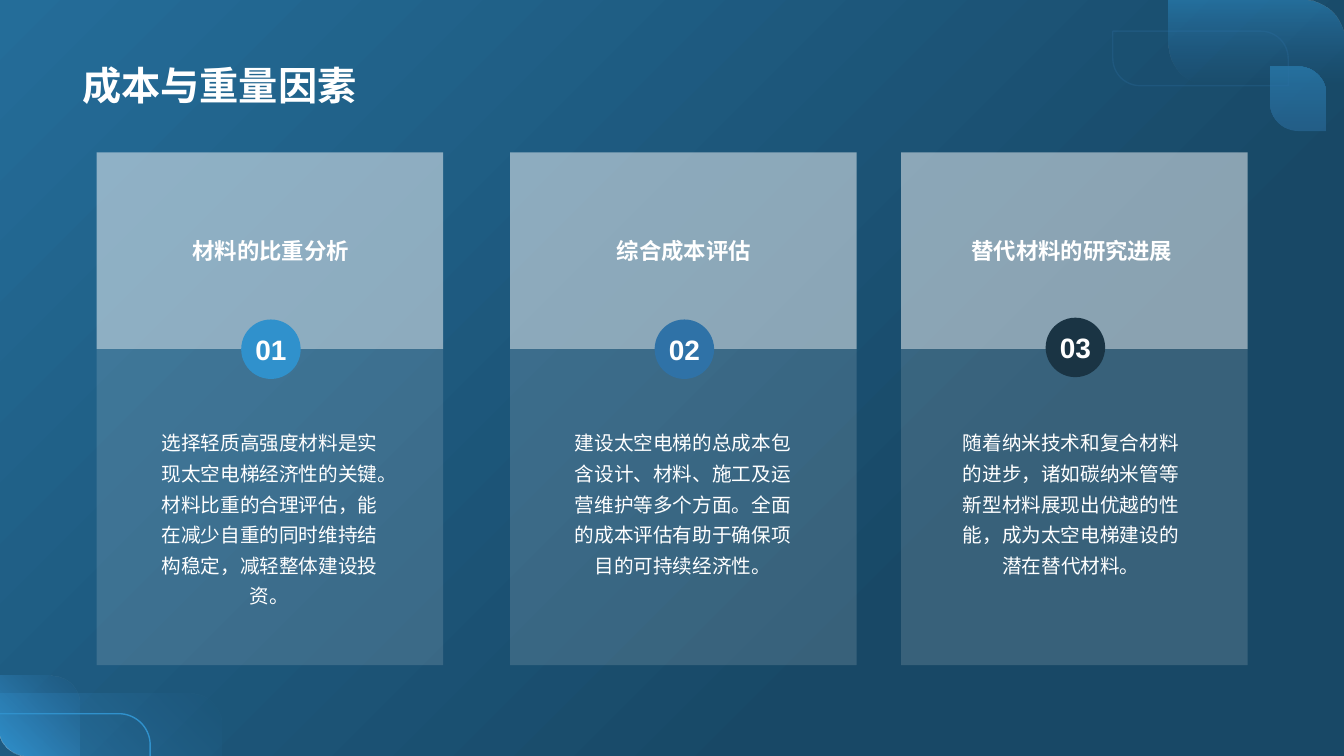
"""Build a slide with three cards on cost and weight factors."""
from math import cos, radians, sin

from lxml import etree
from pptx import Presentation
from pptx.dml.color import RGBColor
from pptx.enum.shapes import MSO_SHAPE
from pptx.enum.text import MSO_ANCHOR, PP_ALIGN
from pptx.oxml.ns import qn
from pptx.util import Pt

RECT = MSO_SHAPE.RECTANGLE
PILL = MSO_SHAPE.ROUNDED_RECTANGLE
LEAF = MSO_SHAPE.ROUND_2_DIAG_RECTANGLE
TOP, MIDDLE, BOTTOM = MSO_ANCHOR.TOP, MSO_ANCHOR.MIDDLE, MSO_ANCHOR.BOTTOM
LEFT, CENTER = PP_ALIGN.LEFT, PP_ALIGN.CENTER
CJK = "Noto Sans CJK SC"
COLORS = {
    "bg_light": "246D99", "bg_dark": "184866", "blue": "2F72A7",
    "sky": "3091CC", "navy": "1A3444", "white": "FFFFFF",
    "header": "FCFCFC", "panel": "F0F0F0",
}
RGB = {name: RGBColor.from_string(value) for name, value in COLORS.items()}


def add_shape(kind, x, y, w, h, color=None, alphas=()):
    """Add a shape without shadow or line; alphas apply to its colours in order."""
    sp = s.shapes.add_shape(kind, Pt(x), Pt(y), Pt(w), Pt(h))
    sp.shadow.inherit = False
    if color:
        sp.fill.solid()
        sp.fill.fore_color.rgb = RGB[color]
        sp.line.fill.background()
    else:
        sp.fill.gradient()
        for stop, name in zip(sp.fill.gradient_stops, ("blue", "sky")):
            stop.color.rgb = RGB[name]
        sp.line.fill.background()
    for clr, alpha in zip(sp._element.spPr.iter(qn("a:srgbClr")), alphas):
        etree.SubElement(clr, qn("a:alpha")).set("val", str(alpha * 1000))
    return sp


def set_text(sp, text, size, bold=False, font=CJK, align=CENTER, anchor=TOP, wrap=True):
    """Write one styled paragraph into a shape and return it."""
    tf = sp.text_frame
    tf.word_wrap = wrap
    tf.vertical_anchor = anchor
    p = tf.paragraphs[0]
    p.text = text
    p.alignment = align
    p.font.size = Pt(size)
    p.font.bold = bold
    p.font.color.rgb = RGB["white"]
    p.font.name = font
    ea = etree.SubElement(p._p.pPr.find(qn("a:defRPr")), qn("a:ea"))
    ea.set("typeface", font)
    return p


prs = Presentation()
prs.slide_width, prs.slide_height = Pt(960), Pt(540)
s = prs.slides.add_slide(prs.slide_layouts[6])

bg = s.background.fill
bg.gradient()
bg.gradient_angle = 315
for stop, name, position in zip(bg.gradient_stops, ("bg_light", "bg_dark"), (0, 0.72)):
    stop.color.rgb = RGB[name]
    stop.position = position

leaves = [
    (-0.7, 482.4, 57.6, 57.6, 0.357, 225, (0, 100)),
    (-0.7, 495.4, 159.1, 44.6, 0.5, 225, (0, 50)),
    (835, 0, 125.3, 61.2, 0.5, 90, (0, 50)),
    (907.2, 47.5, 40.3, 46.1, 0.5, 90, (50, 50)),
]
for x, y, w, h, corner, angle, alphas in leaves:
    sp = add_shape(LEAF, x, y, w, h, alphas=alphas)
    sp.adjustments[0], sp.adjustments[1] = 0, corner
    sp.fill.gradient_angle = angle

sp = add_shape(LEAF, 794.9, 22.3, 125.3, 38.9, "blue")
sp.adjustments[0], sp.adjustments[1] = 0, 0.5
sp.fill.background()
sp.line.color.rgb = RGB["blue"]
sp.line.width = Pt(1)
clr = sp._element.spPr.find(".//" + qn("a:srgbClr"))
etree.SubElement(clr, qn("a:alpha")).set("val", "25000")

cx, cy, radius = 85, 532.1, 22.3
arc = [(cx + radius * sin(radians(a)), cy - radius * cos(radians(a))) for a in range(0, 91, 5)]
fb = s.shapes.build_freeform(Pt(-0.7), Pt(cy - radius))
fb.add_line_segments([(Pt(x), Pt(y)) for x, y in arc + [(cx + radius, 540)]], close=False)
sp = fb.convert_to_shape()
sp.shadow.inherit = False
sp.fill.background()
sp.line.color.rgb = RGB["sky"]
sp.line.width = Pt(1)

title = s.shapes.add_textbox(Pt(51.8), Pt(10.1), Pt(855.4), Pt(70.6))
set_text(title, "成本与重量因素", 28, True, align=LEFT, anchor=BOTTOM)

cards = [
    (69, 103.7, 228.2, "sky", "材料的比重分析",
     "选择轻质高强度材料是实现太空电梯经济性的关键。材料比重的合理评估，能在减少自重的同时维持结构稳定，减轻整体建设投资。"),
    (364.3, 398.9, 228.2, "blue", "综合成本评估",
     "建设太空电梯的总成本包含设计、材料、施工及运营维护等多个方面。全面的成本评估有助于确保项目的可持续经济性。"),
    (643.6, 676.1, 226.9, "navy", "替代材料的研究进展",
     "随着纳米技术和复合材料的进步，诸如碳纳米管等新型材料展现出优越的性能，成为太空电梯建设的潜在替代材料。"),
]
for number, (x, text_x, badge_y, color, heading, body) in enumerate(cards, 1):
    add_shape(RECT, x, 108.8, 247.6, 140.4, "header", (50,))
    add_shape(RECT, x, 249.2, 247.6, 225.9, "panel", (15,))
    badge = add_shape(PILL, x + 103.3, badge_y, 42.5, 42.5, color)
    badge.adjustments[0] = 0.5
    set_text(badge, f"{number:02}", 20, True, "Arial", anchor=MIDDLE, wrap=False)
    tb = s.shapes.add_textbox(Pt(text_x), Pt(299.5), Pt(177.8), Pt(137.5))
    set_text(tb, body, 14).line_spacing = 1.3
    tb = s.shapes.add_textbox(Pt(text_x), Pt(165.6), Pt(179.3), Pt(26.6))
    set_text(tb, heading, 16, True, anchor=BOTTOM)

prs.save("out.pptx")
